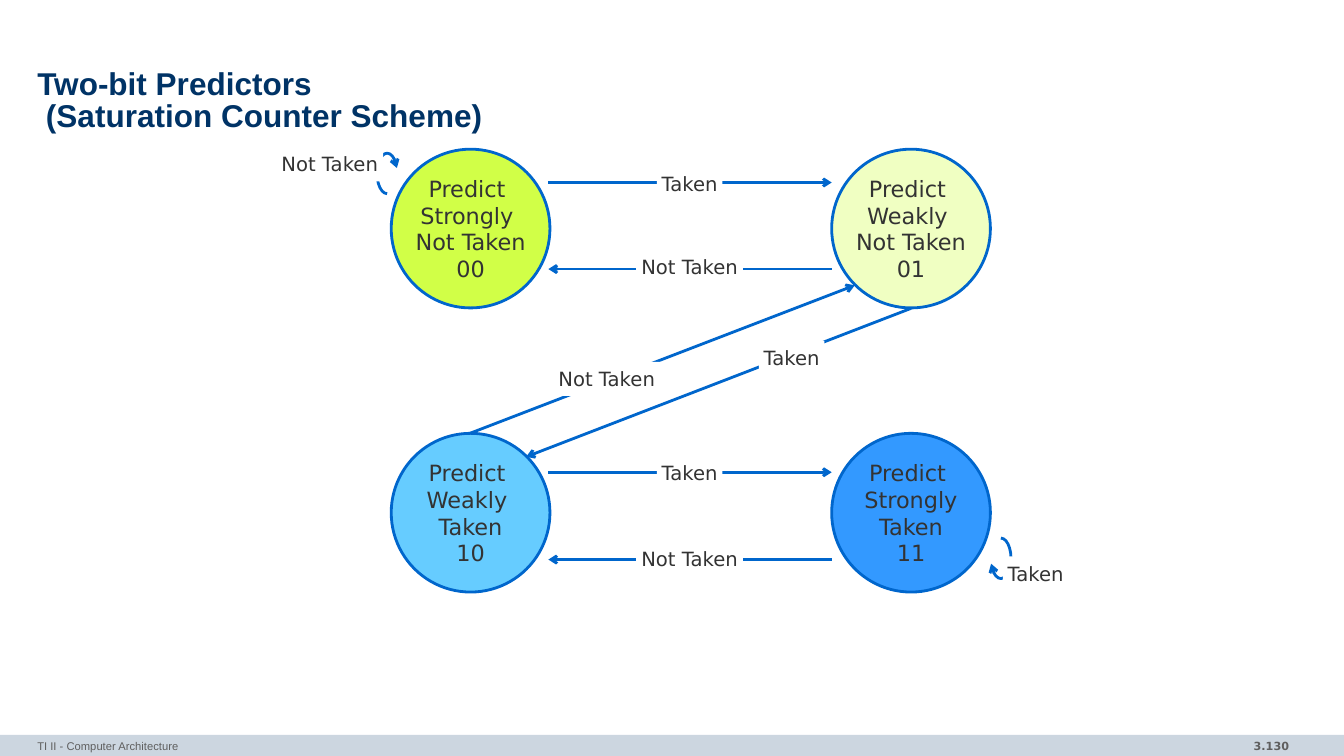
from lxml import etree
from pptx import Presentation
from pptx.dml.color import RGBColor
from pptx.enum.shapes import MSO_CONNECTOR, MSO_SHAPE
from pptx.enum.text import MSO_ANCHOR, PP_ALIGN
from pptx.oxml.ns import qn
from pptx.util import Cm, Pt

WHITE = RGBColor(0xFF, 0xFF, 0xFF)
NAVY = RGBColor(0x00, 0x33, 0x66)
BLUE = RGBColor(0x00, 0x66, 0xCC)
INK = RGBColor(0x33, 0x33, 0x33)
GREY = RGBColor(0x5F, 0x5F, 0x5F)
FOOTER_BLUE = RGBColor(0xCC, 0xD6, 0xE0)
LIME = RGBColor(0xD1, 0xFF, 0x47)
PALE_LIME = RGBColor(0xF0, 0xFF, 0xC2)
SKY = RGBColor(0x66, 0xCC, 0xFF)
AZURE = RGBColor(0x33, 0x99, 0xFF)

RECTANGLE, OVAL, ARC = MSO_SHAPE.RECTANGLE, MSO_SHAPE.OVAL, MSO_SHAPE.ARC
STRAIGHT = MSO_CONNECTOR.STRAIGHT
LEFT, CENTER, RIGHT = PP_ALIGN.LEFT, PP_ALIGN.CENTER, PP_ALIGN.RIGHT
TOP, MIDDLE = MSO_ANCHOR.TOP, MSO_ANCHOR.MIDDLE

SANS, HEADING = "DejaVu Sans", "Arial"
STATE_SIZE = 4
LEFT_STATE, RIGHT_STATE = 9.86, 20.96
UPPER_STATE, LOWER_STATE = 3.76, 10.92
LABEL_WIDTHS = {"Taken": 1.65, "Not Taken": 2.69}
LABEL_HEIGHT = 0.86
MIDWAY = 17.38

STATES = [
    (LEFT_STATE, UPPER_STATE, LIME, "Predict \nStrongly \nNot Taken\n00"),
    (RIGHT_STATE, UPPER_STATE, PALE_LIME, "Predict \nWeakly \nNot Taken\n01"),
    (LEFT_STATE, LOWER_STATE, SKY, "Predict \nWeakly \nTaken\n10"),
    (RIGHT_STATE, LOWER_STATE, AZURE, "Predict \nStrongly\nTaken\n11"),
]
TRANSITIONS = [
    (13.82, 4.6, 20.96, 4.6),
    (20.96, 6.78, 13.82, 6.78),
    (13.82, 11.9, 20.96, 11.9),
    (20.96, 14.1, 13.82, 14.1),
    (22.96, 7.77, 13.26, 11.51),
    (11.84, 10.92, 21.54, 7.19),
]
SELF_LOOPS = [(24.97, 13.56, 0), (9.5, 3.86, 180)]
LABELS = [
    ("Taken", MIDWAY, 4.19),
    ("Not Taken", MIDWAY, 6.3),
    ("Taken", MIDWAY, 11.48),
    ("Not Taken", MIDWAY, 13.64),
    ("Taken", 19.95, 8.59),
    ("Not Taken", 15.29, 9.12),
    ("Taken", 26.1, 14.02),
    ("Not Taken", 8.31, 3.71),
]


def write(frame, text, size, color, font=SANS, bold=False, align=LEFT,
          anchor=TOP, margins=(0, 0), wrap=True):
    frame.text = text
    frame.word_wrap = wrap
    frame.vertical_anchor = anchor
    frame.margin_left = frame.margin_right = Cm(margins[0])
    frame.margin_top = frame.margin_bottom = Cm(margins[1])
    for paragraph in frame.paragraphs:
        paragraph.alignment = align
        for run in paragraph.runs:
            run.font.name = font
            run.font.size = Pt(size)
            run.font.bold = bold
            run.font.color.rgb = color


def add_text(slide, left, top, width, height, text, size, color, **style):
    box = slide.shapes.add_textbox(Cm(left), Cm(top), Cm(width), Cm(height))
    write(box.text_frame, text, size, color, **style)
    return box.text_frame


def add_filled(slide, kind, left, top, width, height, color):
    shape = slide.shapes.add_shape(kind, Cm(left), Cm(top), Cm(width), Cm(height))
    shape.shadow.inherit = False
    shape.fill.solid()
    shape.fill.fore_color.rgb = color
    shape.line.fill.background()
    return shape


def draw_line(line):
    line.color.rgb = BLUE
    line.width = Pt(2)


def add_arrowhead(shape):
    outline = shape.line._get_or_add_ln()
    etree.SubElement(outline, qn("a:tailEnd"), type="arrow")


def add_state(slide, left, top, color, text):
    state = add_filled(slide, OVAL, left, top, STATE_SIZE, STATE_SIZE, color)
    draw_line(state.line)
    write(state.text_frame, text, 16, INK, align=CENTER, anchor=MIDDLE,
          margins=(0.1, 0.1), wrap=False)


def add_transition(slide, x1, y1, x2, y2):
    arrow = slide.shapes.add_connector(STRAIGHT, Cm(x1), Cm(y1), Cm(x2), Cm(y2))
    draw_line(arrow.line)
    add_arrowhead(arrow)
    etree.SubElement(arrow._element.spPr, qn("a:effectLst"))


def add_self_loop(slide, left, top, rotation):
    loop = add_filled(slide, ARC, left, top, 0.51, 1.02, WHITE)
    loop.fill.background()
    loop.adjustments[0] = 162
    loop.adjustments[1] = 90.582
    loop.rotation = rotation
    draw_line(loop.line)
    add_arrowhead(loop)


def add_label(slide, text, center, top):
    width = LABEL_WIDTHS[text]
    label = add_filled(slide, RECTANGLE, center - width / 2, top, width,
                       LABEL_HEIGHT, WHITE)
    write(label.text_frame, text, 14, INK, align=CENTER, margins=(0.1, 0.13),
          wrap=False)


def main():
    presentation = Presentation()
    presentation.slide_width = Cm(33.87)
    presentation.slide_height = Cm(19.05)
    slide = presentation.slides.add_slide(presentation.slide_layouts[6])

    add_filled(slide, RECTANGLE, 0, 18.52, 33.87, 0.53, FOOTER_BLUE)
    add_text(slide, 28.19, 18.49, 4.55, 0.58, "3.130", 8, GREY, bold=True,
             align=RIGHT, margins=(0.25, 0.13))
    title = add_text(slide, 0.94, 1.98, 32, 1.19,
                     "Two-bit Predictors\v (Saturation Counter Scheme)", 22.5,
                     NAVY, font=HEADING, bold=True, anchor=MIDDLE)
    title.paragraphs[0].line_spacing = 0.85
    add_text(slide, 0.94, 18.49, 22.15, 0.56, "TI II - Computer Architecture",
             8, GREY, font=HEADING, margins=(0, 0.13))

    for state in STATES:
        add_state(slide, *state)
    for transition in TRANSITIONS:
        add_transition(slide, *transition)
    for loop in SELF_LOOPS:
        add_self_loop(slide, *loop)
    for label in LABELS:
        add_label(slide, *label)

    presentation.save("out.pptx")


if __name__ == "__main__":
    main()
